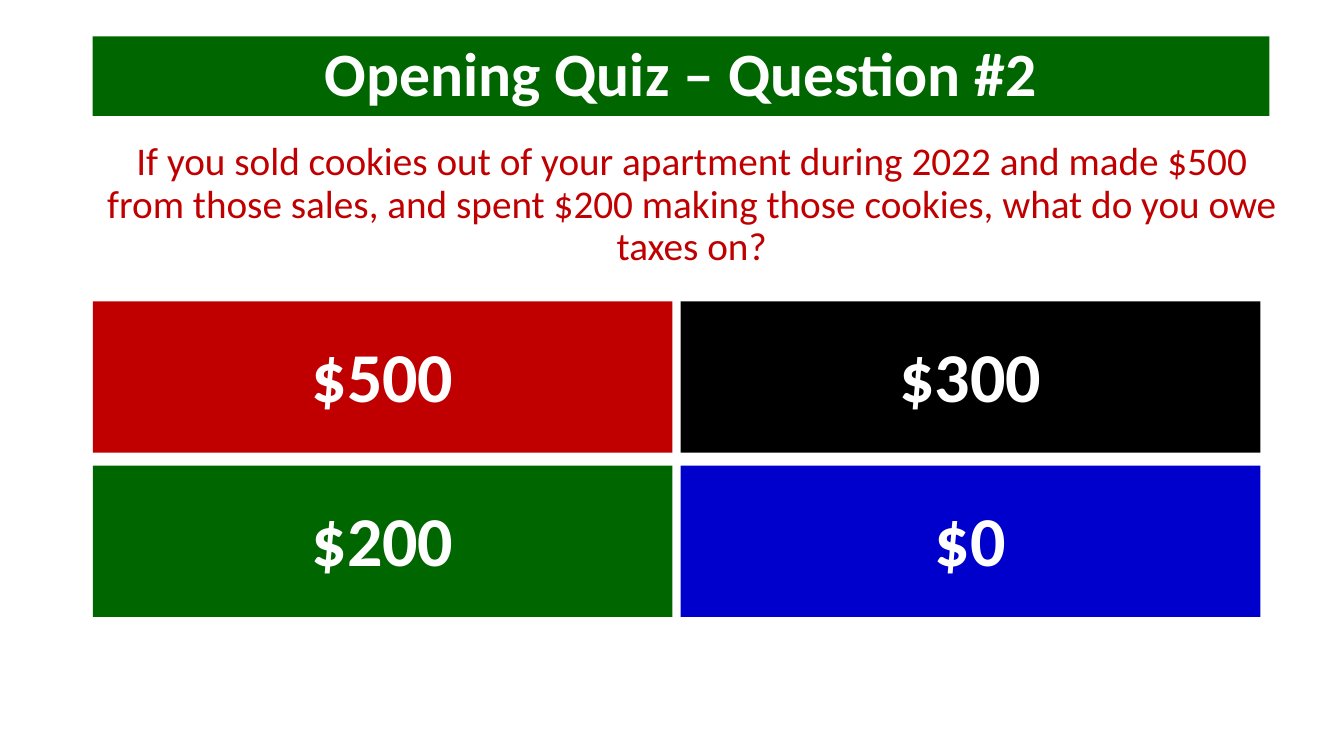
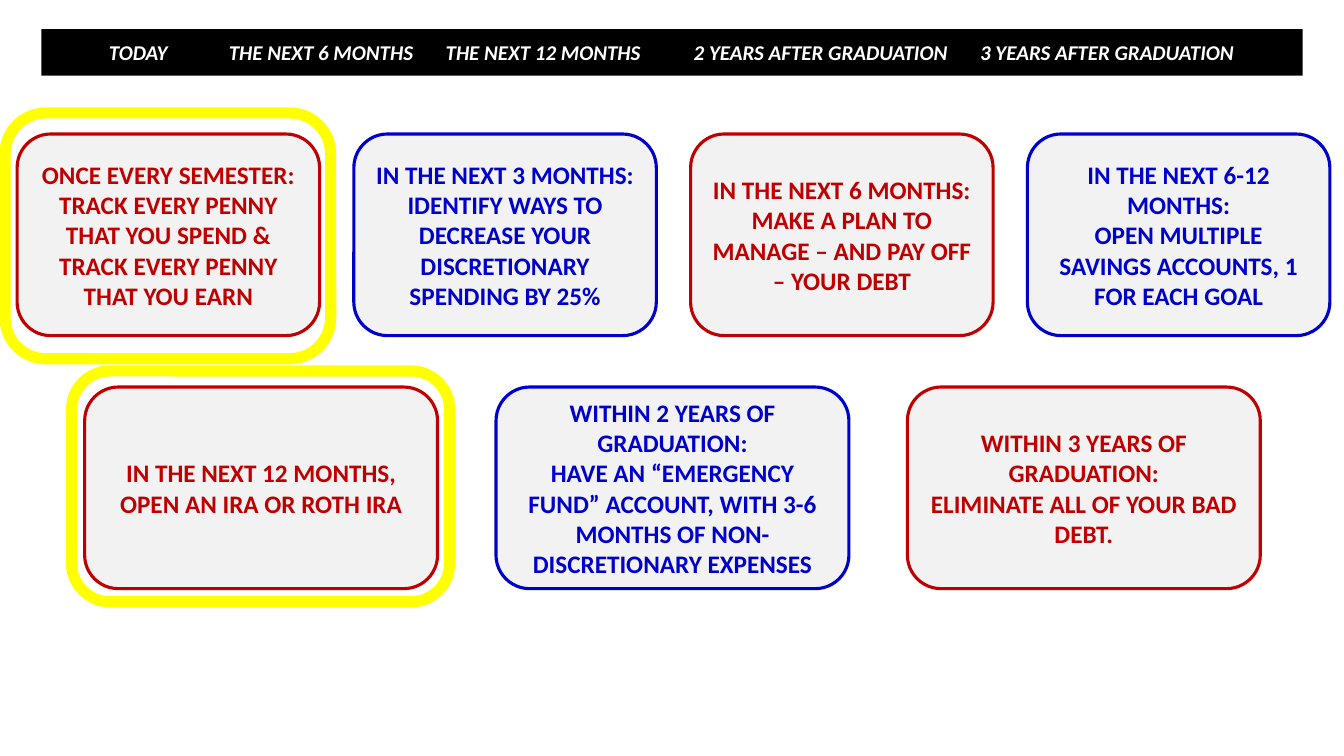
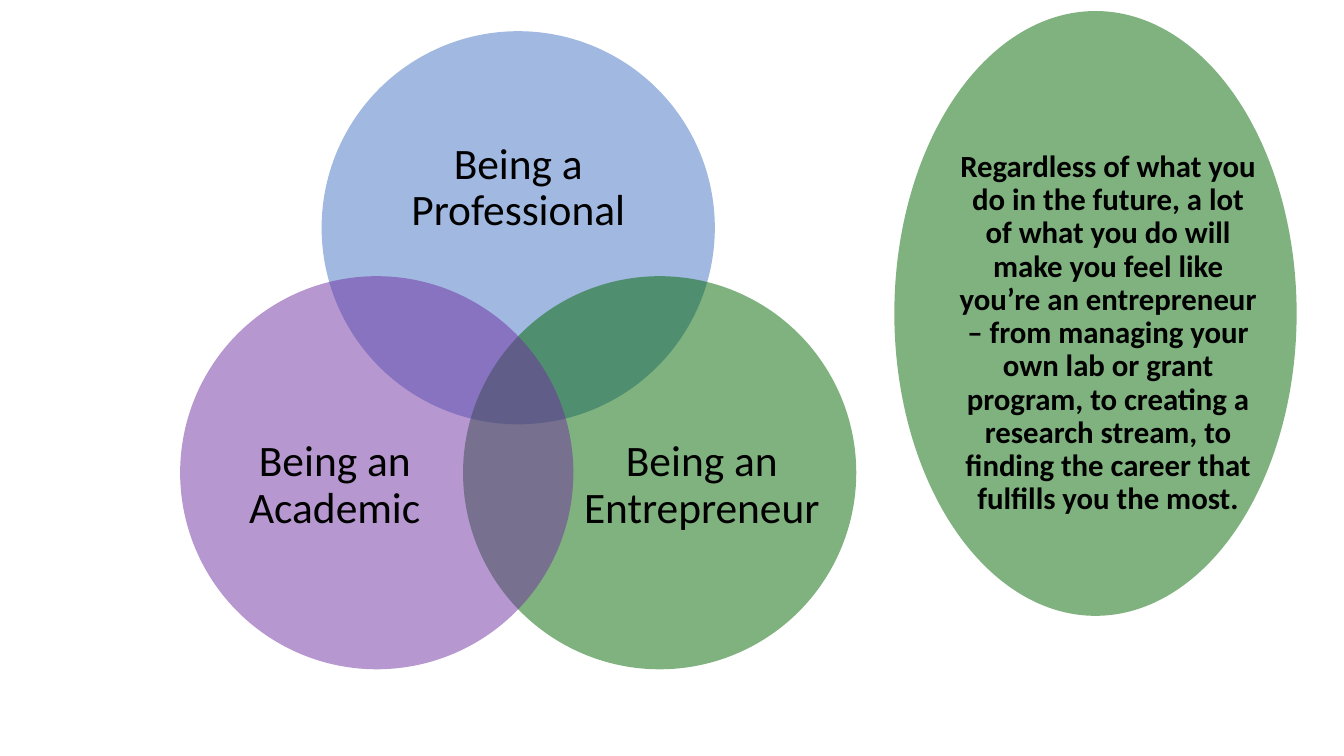
import math

import lxml.etree
import pptx
import pptx.dml.color
import pptx.enum.shapes
import pptx.enum.text
import pptx.oxml.ns
import pptx.util

Inches = pptx.util.Inches
Pt = pptx.util.Pt
Kind = pptx.enum.shapes.MSO_SHAPE
Anchor = pptx.enum.text.MSO_ANCHOR
Align = pptx.enum.text.PP_ALIGN
qn = pptx.oxml.ns.qn


class Deck:
    font = "Calibri"
    hues = {
        "white": "FFFFFF",
        "black": "000000",
        "green": "006600",
        "red": "C00000",
        "blue": "0000CC",
        "grey": "F2F2F2",
        "glow": "FFFF00",
        "sky": "4472C4",
        "plum": "7030A0",
    }

    def __init__(self):
        self.file = pptx.Presentation()
        self.file.slide_width = Inches(13.33)
        self.file.slide_height = Inches(7.5)
        self.slide = None

    def page(self):
        self.slide = self.file.slides.add_slide(self.file.slide_layouts[6])

    def hue(self, name):
        return pptx.dml.color.RGBColor.from_string(self.hues[name])

    def shape(self, kind, box, fill=None, line=None, width=2.25, alpha=None):
        shape = self.slide.shapes.add_shape(kind, *map(Inches, box))
        shape.shadow.inherit = False
        if fill:
            shape.fill.solid()
            shape.fill.fore_color.rgb = self.hue(fill)
        else:
            shape.fill.background()
        if line:
            shape.line.color.rgb = self.hue(line)
            shape.line.width = Pt(width)
        else:
            shape.line.fill.background()
        if alpha:
            tint = shape.element.spPr.find(qn("a:solidFill"))[0]
            lxml.etree.SubElement(tint, qn("a:alpha"), val=str(alpha * 1000))
        return shape

    def letter(self, shape, text, size, hue, bold=False, italic=False,
               lead=None, anchor=Anchor.MIDDLE, align=Align.CENTER):
        frame = shape.text_frame
        frame.word_wrap = True
        frame.vertical_anchor = anchor
        frame.text = text
        for para in frame.paragraphs:
            para.alignment = align
            if lead:
                para.line_spacing = lead
            for run in para.runs:
                run.font.name = self.font
                run.font.size = Pt(size)
                run.font.bold = bold
                run.font.italic = italic
                run.font.color.rgb = self.hue(hue)
        return frame

    def bar(self, box, fill, text, size, **style):
        shape = self.shape(Kind.RECTANGLE, box, fill)
        return self.letter(shape, text, size, "white", bold=True, **style)

    def text(self, box, text, size, hue, **style):
        shape = self.slide.shapes.add_textbox(*map(Inches, box))
        return self.letter(shape, text, size, hue, lead=0.9, **style)

    def label(self, box, text, size, **style):
        frame = self.text(box, text, size, "black", **style)
        frame.margin_left = frame.margin_right = 0
        frame.margin_top = frame.margin_bottom = 0

    def card(self, box, hue, text):
        shape = self.shape(Kind.ROUNDED_RECTANGLE, box, "grey", hue)
        self.letter(shape, text, 18, hue, bold=True)

    def ring(self, box):
        self.shape(Kind.ROUNDED_RECTANGLE, box, line="glow", width=8)

    def disc(self, box, hue):
        self.shape(Kind.OVAL, box, hue, alpha=50)

    def tabs(self, para, stops):
        props = para._p.get_or_add_pPr()
        tabs = lxml.etree.SubElement(props, qn("a:tabLst"))
        for stop in stops:
            lxml.etree.SubElement(tabs, qn("a:tab"),
                                  pos=str(Inches(stop)), algn="l")


def quiz(deck):
    deck.page()
    deck.bar((0.92, 0.36, 11.67, 0.79), "green",
             "Opening Quiz – Question #2", 44, lead=0.9)
    deck.text((0.92, 1.36, 11.88, 5.4),
              "If you sold cookies out of your apartment during 2022 and made "
              "$500 from those sales, and spent $200 making those cookies, "
              "what do you owe taxes on?", 28, "red", anchor=Anchor.TOP)
    picks = [("$500", "red"), ("$300", "black"),
             ("$200", "green"), ("$0", "blue")]
    for i, (text, fill) in enumerate(picks):
        row, col = divmod(i, 2)
        box = (0.92 + 5.83 * col, 2.99 + 1.63 * row, 5.75, 1.5)
        frame = deck.bar(box, fill, text, 50, lead=0.9)
        frame.margin_top = Inches(0.1)


def goals(deck):
    deck.page()
    times = ["TODAY", "THE NEXT 6 MONTHS", "THE NEXT 12 MONTHS",
             "2 YEARS AFTER GRADUATION", "3 YEARS AFTER GRADUATION"]
    frame = deck.bar((0.41, 0.29, 12.51, 0.46), "black", "\t".join(times),
                     15, italic=True, align=Align.LEFT)
    frame.margin_left = Inches(0.67)
    deck.tabs(frame.paragraphs[0], (1.19, 3.34, 5.8, 8.64))
    rows = [
        (0.17, 1.33, 3, 3.34, [
            "ONCE EVERY SEMESTER:\nTRACK EVERY PENNY THAT YOU SPEND & "
            "TRACK EVERY PENNY THAT YOU EARN",
            "IN THE NEXT 3 MONTHS:\nIDENTIFY WAYS TO DECREASE YOUR "
            "DISCRETIONARY SPENDING BY 25%",
            "IN THE NEXT 6 MONTHS:\nMAKE A PLAN TO MANAGE – AND PAY OFF "
            "– YOUR DEBT",
            "IN THE NEXT 6-12 MONTHS:\nOPEN MULTIPLE SAVINGS ACCOUNTS, "
            "1 FOR EACH GOAL",
        ]),
        (0.84, 3.84, 3.5, 4.08, [
            "IN THE NEXT 12 MONTHS, OPEN AN IRA OR ROTH IRA",
            "WITHIN 2 YEARS OF GRADUATION:\nHAVE AN “EMERGENCY FUND” "
            "ACCOUNT, WITH 3-6 MONTHS OF NON-DISCRETIONARY EXPENSES",
            "WITHIN 3 YEARS OF GRADUATION:\nELIMINATE ALL OF YOUR BAD DEBT.",
        ]),
    ]
    for left, top, width, step, texts in rows:
        for i, text in enumerate(texts):
            hue = ("red", "blue")[i % 2]
            deck.card((left + step * i, top, width, 2), hue, text)
    deck.ring((0.05, 1.12, 3.23, 2.44))
    deck.ring((0.71, 3.68, 3.75, 2.29))


def roles(deck):
    deck.page()
    size, reach = 3.9, 1.62
    parts = [
        (-90, "sky", "Being a Professional", (3.71, 0.99, 2.86, 1.76)),
        (30, "green", "Being an Entrepreneur", (5.79, 3.75, 2.34, 2.15)),
        (150, "plum", "Being an Academic", (2.15, 3.75, 2.34, 2.15)),
    ]
    for turn, hue, text, box in parts:
        angle = math.radians(turn)
        left = 5.14 + reach * math.cos(angle) - size / 2
        top = 3.88 + reach * math.sin(angle) - size / 2
        deck.disc((left, top, size, size), hue)
        deck.label(box, text, 31)
    deck.disc((8.87, 0.11, 3.99, 6), "green")
    deck.label((9.5, 1.66, 2.98, 3.3),
               "Regardless of what you do in the future, a lot of what you do "
               "will make you feel like you’re an entrepreneur – from managing "
               "your own lab or grant program, to creating a research stream, "
               "to finding the career that fulfills you the most.",
               22, bold=True)


def main():
    deck = Deck()
    quiz(deck)
    goals(deck)
    roles(deck)
    deck.file.save("out.pptx")


if __name__ == "__main__":
    main()
